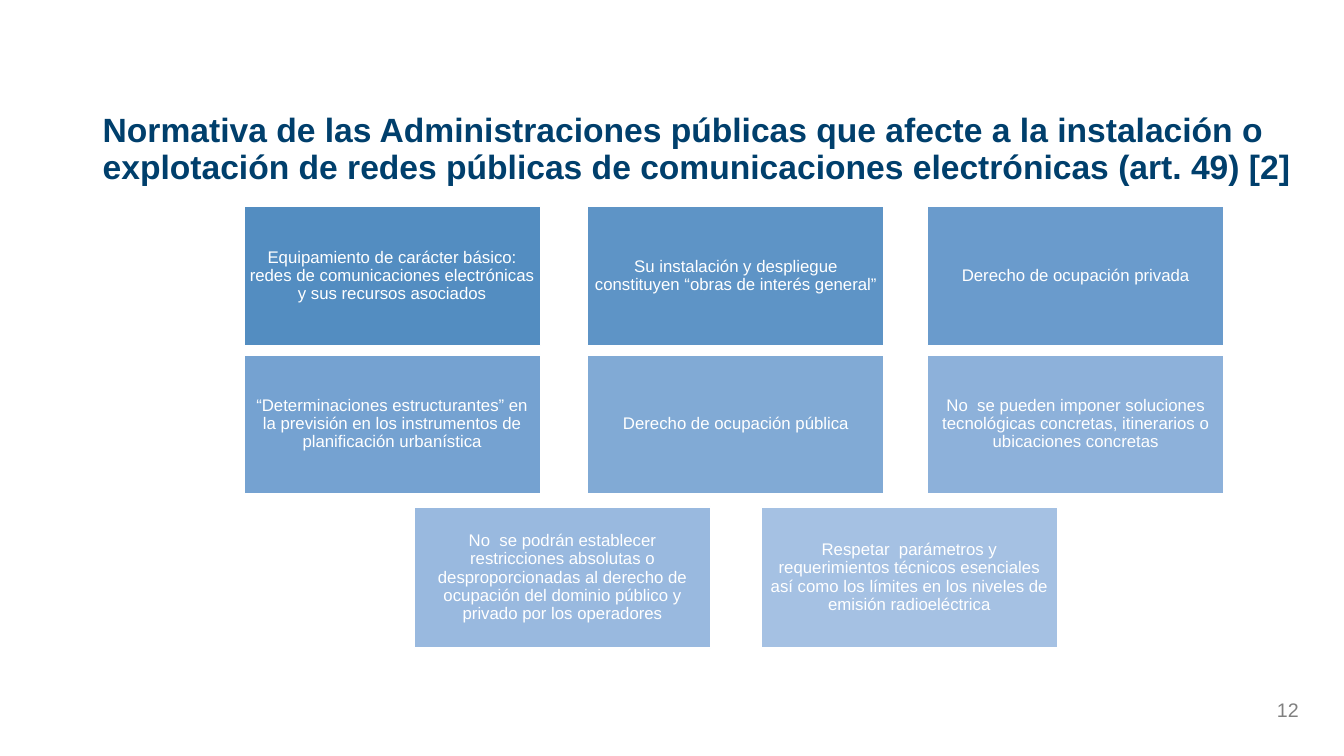
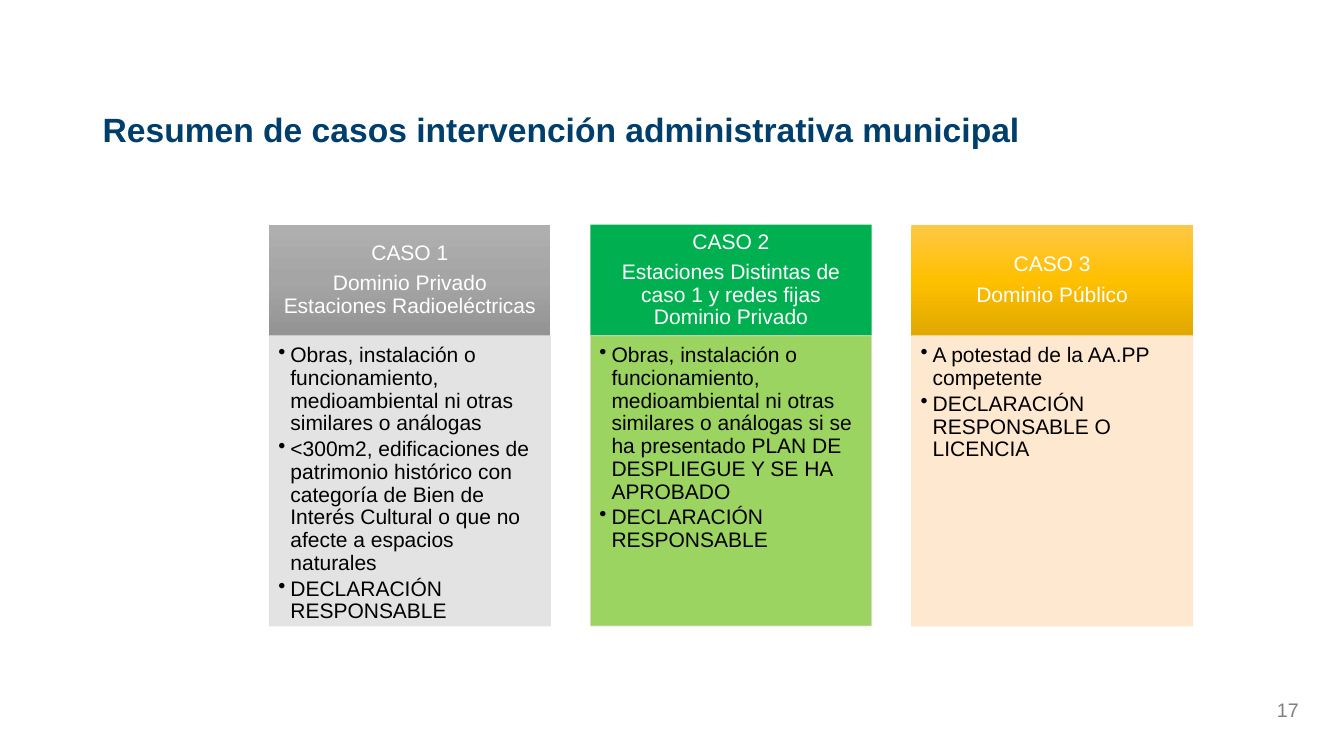
import pptx
import pptx.util
import pptx.dml.color
import pptx.enum.shapes
import pptx.enum.text
import pptx.oxml.ns
import lxml.etree

Inches, Pt = pptx.util.Inches, pptx.util.Pt
ALIGN = pptx.enum.text.PP_ALIGN
ANCHOR = pptx.enum.text.MSO_ANCHOR
qn = pptx.oxml.ns.qn

# Shared look
FONT = "Arial"
NAVY, GREY, WHITE, BLACK = "003F6C", "808080", "FFFFFF", "000000"
LINE_SPACING = 0.9
DEFAULT_INSETS = (0.1, 0.05, 0.1, 0.05)

# Slide 12: rows of boxes as (top, height, lefts, [(text, fill), ...])
RULES_TITLE = ("Normativa de las Administraciones públicas que afecte a la instalación o "
               "explotación de redes públicas de comunicaciones electrónicas (art. 49) [2]")
RULE_WIDTH = 2.94
COLUMNS = (2.42, 5.83, 9.2)
RULE_ROWS = [
    (2.05, 1.38, COLUMNS, [
        ("Equipamiento de carácter básico: redes de comunicaciones electrónicas "
         "y sus recursos asociados", "538DC1"),
        ("Su instalación y despliegue constituyen “obras de interés general”", "5E94C6"),
        ("Derecho de ocupación privada", "6A9BCC"),
    ]),
    (3.52, 1.38, COLUMNS, [
        ("“Determinaciones estructurantes” en la previsión en los instrumentos de "
         "planificación urbanística", "75A2D1"),
        ("Derecho de ocupación pública", "81AAD5"),
        ("No  se pueden imponer soluciones tecnológicas concretas, itinerarios o "
         "ubicaciones concretas", "8DB1DA"),
    ]),
    (5.03, 1.4, (4.11, 7.55), [
        ("No  se podrán establecer restricciones absolutas o desproporcionadas al derecho "
         "de ocupación del dominio público y privado por los operadores", "99B9DF"),
        ("Respetar  parámetros y requerimientos técnicos esenciales así como los límites "
         "en los niveles de emisión radioeléctrica", "A5C1E3"),
    ]),
]

# Slide 17: one column per case; several header colours make a gradient
CASES_TITLE = "Resumen de casos intervención administrativa municipal"
CASES = [
    {"header": ["CASO 1", "Dominio Privado Estaciones Radioeléctricas"],
     "header_fill": ["AFAFAF", "A5A5A5", "939393"],
     "body_fill": "E1E1E1", "border": "E1E1E1",
     "points": [
         "Obras, instalación o funcionamiento, medioambiental ni otras similares o análogas",
         "<300m2, edificaciones de patrimonio histórico con categoría de Bien de Interés "
         "Cultural o que no afecte a espacios naturales",
         "DECLARACIÓN RESPONSABLE"]},
    {"header": ["CASO 2", "Estaciones Distintas de caso 1 y redes fijas Dominio Privado"],
     "header_fill": ["00B050"],
     "body_fill": "92D050", "border": "F1D5D5",
     "points": [
         "Obras, instalación o funcionamiento, medioambiental ni otras similares o análogas "
         "si se ha presentado PLAN DE DESPLIEGUE Y SE HA APROBADO",
         "DECLARACIÓN RESPONSABLE"]},
    {"header": ["CASO 3", "Dominio Público"],
     "header_fill": ["FFC746", "FFC000", "E0A800"],
     "body_fill": "FFE6CB", "border": "FFE6CB",
     "points": [
         "A potestad de la AA.PP competente",
         "DECLARACIÓN RESPONSABLE O LICENCIA"]},
]
CASE_LEFT, CASE_LAST_LEFT, CASE_WIDTH = 2.67, 9.04, 2.79
HEADER_TOP, HEADER_HEIGHT, BODY_HEIGHT = 2.23, 1.1, 2.88


def rgb(value):
    return pptx.dml.color.RGBColor.from_string(value)


def write(shape, texts, size, color, align=ALIGN.LEFT, anchor=ANCHOR.TOP,
          insets=DEFAULT_INSETS, space_after=0, bold=False, bullet_indent=0):
    frame = shape.text_frame
    frame.word_wrap = True
    frame.vertical_anchor = anchor
    (frame.margin_left, frame.margin_top,
     frame.margin_right, frame.margin_bottom) = map(Inches, insets)
    frame.text = "\n".join(texts)
    for paragraph in frame.paragraphs:
        if bullet_indent:
            properties = paragraph._p.get_or_add_pPr()
            properties.set("marL", str(Inches(bullet_indent)))
            properties.set("indent", str(-Inches(bullet_indent)))
            lxml.etree.SubElement(properties, qn("a:buChar"), char="•")
        paragraph.alignment = align
        paragraph.line_spacing = LINE_SPACING
        paragraph.space_after = Pt(space_after)
        for run in paragraph.runs:
            run.font.name, run.font.size, run.font.bold = FONT, Pt(size), bold
            run.font.color.rgb = rgb(color)


def add_text(slide, box, texts, size, color, **style):
    shape = slide.shapes.add_textbox(*map(Inches, box))
    write(shape, texts, size, color, **style)


def set_alpha(fill, percent):
    color = fill._xPr.find(".//" + qn("a:srgbClr"))
    lxml.etree.SubElement(color, qn("a:alpha"), val=str(percent * 1000))


def set_gradient(fill, colors):
    """Top-to-bottom gradient with evenly spaced stops."""
    fill.gradient()
    fill.gradient_angle = 270
    stops = fill._xPr.find(".//" + qn("a:gsLst"))
    for stop in list(stops):
        stops.remove(stop)
    for index, color in enumerate(colors):
        position = 100000 * index // (len(colors) - 1)
        stop = lxml.etree.SubElement(stops, qn("a:gs"), pos=str(position))
        lxml.etree.SubElement(stop, qn("a:srgbClr"), val=color)


def add_box(slide, box, colors, border=None, border_width=1, opacity=100):
    shape = slide.shapes.add_shape(
        pptx.enum.shapes.MSO_SHAPE.RECTANGLE, *map(Inches, box))
    shape.shadow.inherit = False
    if len(colors) > 1:
        set_gradient(shape.fill, colors)
    else:
        shape.fill.solid()
        shape.fill.fore_color.rgb = rgb(colors[0])
    if border:
        shape.line.color.rgb = rgb(border)
        shape.line.width = Pt(border_width)
    else:
        shape.line.fill.background()
    if opacity < 100:
        set_alpha(shape.fill, opacity)
        set_alpha(shape.line.fill, opacity)
    return shape


def new_slide(presentation, title, title_width, number):
    slide = presentation.slides.add_slide(presentation.slide_layouts[6])
    add_text(slide, (0, 6.9, 12.98, 0.4), [number], 14, GREY, align=ALIGN.RIGHT)
    add_text(slide, (0.92, 1.08, title_width, 0.7), [title], 24, NAVY, bold=True)
    return slide


def build_rules(presentation):
    slide = new_slide(presentation, RULES_TITLE, 11.99, "12")
    for top, height, lefts, boxes in RULE_ROWS:
        for left, (text, color) in zip(lefts, boxes):
            shape = add_box(slide, (left, top, RULE_WIDTH, height), [color], WHITE)
            write(shape, [text], 12, WHITE, align=ALIGN.CENTER,
                  anchor=ANCHOR.MIDDLE, insets=(0.05,) * 4)


def build_cases(presentation):
    slide = new_slide(presentation, CASES_TITLE, 11.5, "17")
    pitch = (CASE_LAST_LEFT - CASE_LEFT) / (len(CASES) - 1)
    for index, case in enumerate(CASES):
        left = CASE_LEFT + index * pitch
        header = add_box(slide, (left, HEADER_TOP, CASE_WIDTH, HEADER_HEIGHT),
                         case["header_fill"])
        write(header, case["header"], 15, WHITE, align=ALIGN.CENTER,
              anchor=ANCHOR.MIDDLE, insets=(0.12, 0.07, 0.12, 0.07), space_after=5.25)
        body = add_box(slide, (left, HEADER_TOP + HEADER_HEIGHT, CASE_WIDTH, BODY_HEIGHT),
                       [case["body_fill"]], case["border"], 0.5, opacity=90)
        write(body, case["points"], 15, BLACK, insets=(0.09, 0.09, 0.12, 0.13),
              space_after=2.25, bullet_indent=0.12)


def main():
    presentation = pptx.Presentation()
    presentation.slide_width = Inches(13.33)
    presentation.slide_height = Inches(7.5)
    build_rules(presentation)
    build_cases(presentation)
    presentation.save("out.pptx")


if __name__ == "__main__":
    main()
